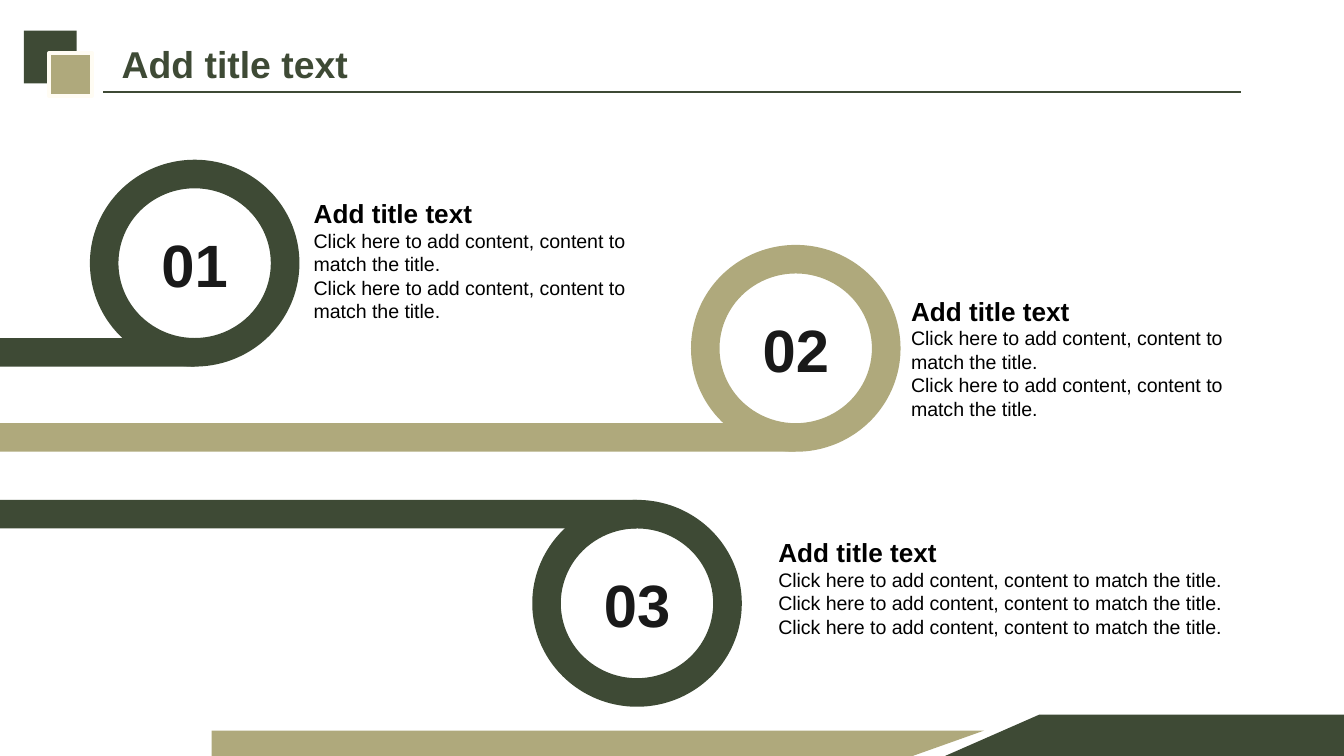
from lxml.etree import SubElement
from pptx import Presentation
from pptx.dml.color import RGBColor
from pptx.enum.shapes import MSO_CONNECTOR, MSO_SHAPE
from pptx.enum.text import MSO_ANCHOR, PP_ALIGN
from pptx.oxml.ns import qn
from pptx.util import Cm, Pt

GREEN = RGBColor(0x3E, 0x4A, 0x35)
SAND = RGBColor(0xAF, 0xA9, 0x7C)
CREAM = RGBColor(0xFF, 0xFC, 0xF3)
INK = RGBColor(0x19, 0x19, 0x19)
BLACK = RGBColor(0, 0, 0)

RING_WIDTH, RING_HEIGHT, BAND = 3.96, 3.91, 0.54
BAR_LEFT = -0.05
HEADING = "Add title text"
CONTENT = "Click here to add content, content to match the title."


class SlideBuilder:
    heading = {"name": "Arial", "size": Pt(14), "bold": True}
    body = {"name": "Arial", "size": Pt(10.5), "bold": False}
    number = {"name": "Arial", "size": Pt(32), "bold": True}
    title = {"name": "Arial", "size": Pt(20), "bold": True}

    def __init__(self, page):
        self.page = page

    def paint(self, shape, color):
        shape.shadow.inherit = False
        shape.fill.solid()
        shape.fill.fore_color.rgb = color
        shape.line.fill.background()
        return shape

    def shape(self, kind, left, top, width, height, color):
        shape = self.page.shapes.add_shape(
            kind, Cm(left), Cm(top), Cm(width), Cm(height))
        return self.paint(shape, color)

    def polygon(self, points, color):
        corners = [(Cm(x), Cm(y)) for x, y in points]
        builder = self.page.shapes.build_freeform(*corners[0])
        builder.add_line_segments(corners[1:], close=True)
        return self.paint(builder.convert_to_shape(), color)

    def line(self, left, right, top, color, weight):
        line = self.page.shapes.add_connector(
            MSO_CONNECTOR.STRAIGHT, Cm(left), Cm(top), Cm(right), Cm(top))
        line.line.color.rgb = color
        line.line.width = Pt(weight)
        SubElement(line._element.spPr, qn("a:effectLst"))

    def text(self, left, top, width, height, lines, color,
             align=PP_ALIGN.LEFT, anchor=MSO_ANCHOR.TOP):
        box = self.page.shapes.add_textbox(
            Cm(left), Cm(top), Cm(width), Cm(height))
        frame = box.text_frame
        frame.word_wrap = True
        frame.vertical_anchor = anchor
        for index, (words, style) in enumerate(lines):
            para = frame.add_paragraph() if index else frame.paragraphs[0]
            para.alignment = align
            span = para.add_run()
            span.text = words
            span.font.color.rgb = color
            for key, value in style.items():
                setattr(span.font, key, value)

    def loop(self, label, left, top, color, bar_at_top):
        bar_top = top if bar_at_top else top + RING_HEIGHT - BAND
        bar_width = left + RING_WIDTH / 2 - BAR_LEFT
        self.shape(MSO_SHAPE.RECTANGLE, BAR_LEFT, bar_top, bar_width, BAND, color)
        ring = self.shape(MSO_SHAPE.DONUT, left, top, RING_WIDTH, RING_HEIGHT, color)
        ring.adjustments[0] = BAND / RING_HEIGHT
        self.text(left + BAND, top + BAND, RING_WIDTH - 2 * BAND,
                  RING_HEIGHT - 2 * BAND, [(label, self.number)], INK,
                  PP_ALIGN.CENTER, MSO_ANCHOR.MIDDLE)

    def caption(self, left, top, width, height, repeats):
        lines = [(HEADING, self.heading)] + [(CONTENT, self.body)] * repeats
        self.text(left, top, width, height, lines, BLACK)


def main():
    deck = Presentation()
    deck.slide_width, deck.slide_height = Cm(25.4), Cm(14.29)
    slide = SlideBuilder(deck.slides.add_slide(deck.slide_layouts[6]))

    loops = [
        ("01", 1.7, 3.02, GREEN, False),
        ("02", 13.06, 4.63, SAND, False),
        ("03", 10.06, 9.45, GREEN, True),
    ]
    for loop in loops:
        slide.loop(*loop)

    captions = [
        (5.68, 3.61, 7.39, 2.64, 2),
        (16.97, 5.45, 6.73, 2.64, 2),
        (14.46, 10.01, 10, 2.21, 3),
    ]
    for caption in captions:
        slide.caption(*caption)

    slide.polygon([(4, 13.81), (18.6, 13.81), (17.25, 14.29), (4, 14.29)], SAND)
    slide.polygon([(19.64, 13.51), (25.45, 13.51), (25.45, 14.3), (17.84, 14.3)], GREEN)

    slide.shape(MSO_SHAPE.RECTANGLE, 0.45, 0.58, 1, 1, GREEN)
    square = slide.shape(MSO_SHAPE.RECTANGLE, 0.93, 1, 0.81, 0.81, SAND)
    square.line.color.rgb = CREAM
    square.line.width = Pt(2)
    slide.line(1.95, 23.45, 1.74, GREEN, 1.5)
    slide.text(2.05, 0.66, 16.4, 0.97, [(HEADING, slide.title)], GREEN)

    deck.save("out.pptx")


if __name__ == "__main__":
    main()
